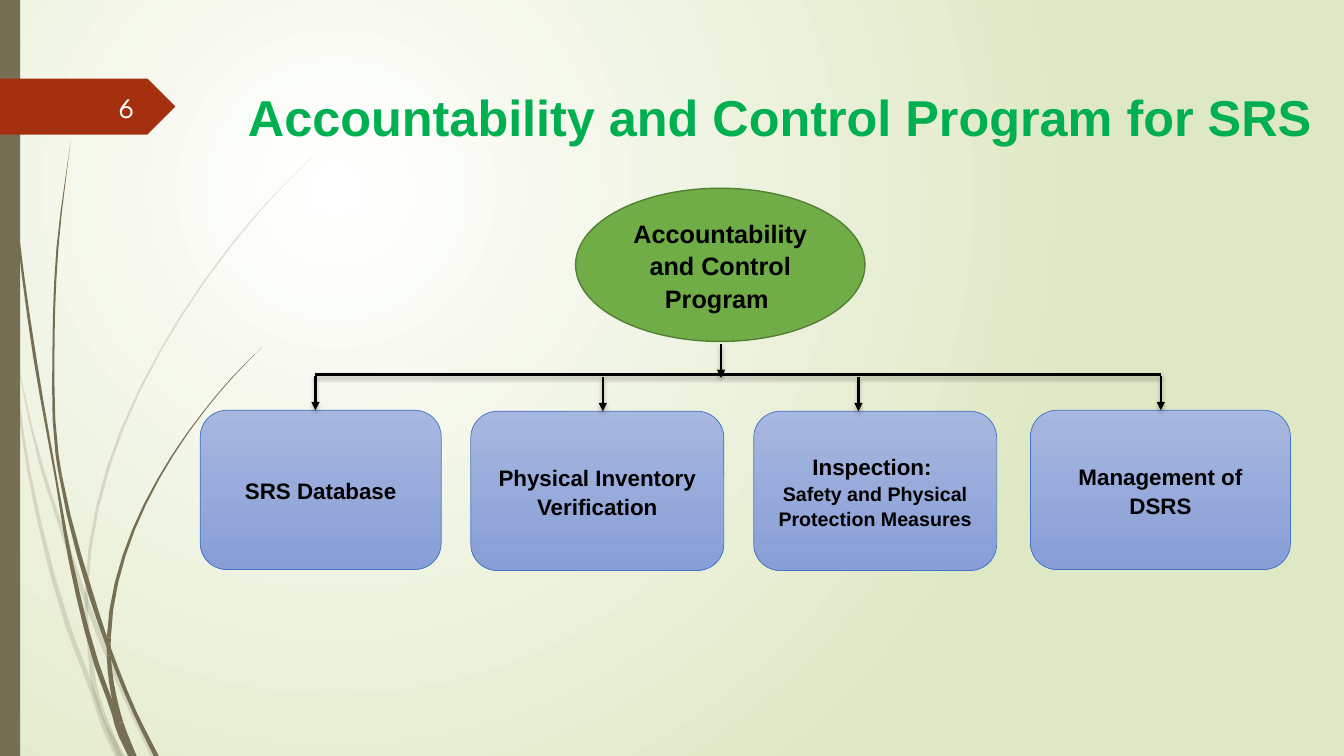
from lxml.etree import SubElement
from pptx import Presentation
from pptx.dml.color import RGBColor
from pptx.enum.shapes import MSO_CONNECTOR, MSO_SHAPE
from pptx.enum.text import MSO_ANCHOR, PP_ALIGN
from pptx.oxml.ns import qn
from pptx.util import Inches, Pt

WIDTH, HEIGHT = Inches(13.33), Inches(7.5)

BLACK = RGBColor(0x00, 0x00, 0x00)
WHITE = RGBColor(0xFF, 0xFF, 0xFF)
PALE = RGBColor(0xDF, 0xE8, 0xC4)
OLIVE = RGBColor(0x76, 0x6F, 0x54)
RUST = RGBColor(0xA5, 0x30, 0x10)
TITLE = RGBColor(0x00, 0xB0, 0x50)
GREEN = RGBColor(0x70, 0xAD, 0x47)
EDGE = RGBColor(0x53, 0x80, 0x35)
BLUE = RGBColor(0x44, 0x72, 0xC4)
LIGHT = RGBColor(0xA8, 0xB7, 0xDF)
DEEP = RGBColor(0x88, 0x9E, 0xD7)
NUMBER = RGBColor(0xFE, 0xFF, 0xFF)

# Strands: joints between their parts, then centre x, y and breadth in percent
FAINT = [
    ((1, 5), [(0, 38.7, .15), (.83, 46.7, .15), (2.18, 62.7, .23),
              (5.03, 82.7, .38), (7.05, 92.3, .38), (7.58, 95.2, .4),
              (8.93, 100, .75)]),
    ((3,), [(1.05, 46, 0), (3.08, 61.7, .23), (4.5, 69.5, .3),
            (6.45, 79.7, .38), (9.38, 92.4, .38), (11.4, 100, .38)]),
    ((5, 6, 8), [(23.4, 20.4, 0), (20.1, 26.4, .08), (17.1, 32.7, .15),
                 (11.93, 46.4, .15), (8.1, 61.6, .23), (6.45, 78, .23),
                 (6.45, 81.3, .23), (6.68, 86.1, .3), (7.05, 91.1, .4),
                 (8.93, 100, .38)]),
]
SOLID = [
    ((4, 8), [(.26, 0, .08), (.56, 14.7, .08), (1.35, 31.1, .15),
              (2.59, 47.3, .23), (4.2, 63.6, .15), (5.25, 74.1, .3),
              (7.16, 87.7, .38), (8.55, 94.7, .38), (8.78, 96.2, .4),
              (9.83, 100, .6)]),
    ((4, 6), [(5.25, 18.8, 0), (4.28, 32.7, .15), (3.98, 46.5, .15),
              (4.24, 60, .23), (4.5, 62.9, .23), (6.79, 78.8, .38),
              (8.1, 85.7, .3), (10.05, 94.3, .3), (11.63, 100, .38)]),
    ((5, 6, 8), [(19.5, 45.9, 0), (17.3, 49.9, .08), (15.3, 54.1, .08),
                 (11.8, 63.3, .15), (9.23, 73.5, .23), (8.1, 84.3, .3),
                 (8.1, 86.7, .3), (8.48, 92.1, .38), (9, 95.6, .38),
                 (9.98, 100, .38)]),
]

# Boxes: left, top, width, arrow x (percent) and lines of text with sizes
BOX_TALL, DROP, BUS = 21.07, 4.5, 49.55
BOXES = [
    (14.9, 54.27, 17.93, 23.47, [("SRS Database", 16)]),
    (35.03, 54.4, 18.83, 44.85, [("Physical Inventory Verification", 16)]),
    (56.08, 54.4, 18.08, 63.87, [("Inspection: ", 16),
                                 ("Safety and Physical Protection Measures", 14)]),
    (76.67, 54.27, 19.35, 86.37, [("Management of DSRS", 16)]),
]


def across(share):
    return round(WIDTH * share / 100)


def down(share):
    return round(HEIGHT * share / 100)


def place(x, y, wide, tall):
    return across(x), down(y), across(wide), down(tall)


def write(frame, lines, font="Arial", color=BLACK, bold=True, wrap=True,
          align=PP_ALIGN.CENTER, anchor=MSO_ANCHOR.MIDDLE, space=None, after=0):
    frame.word_wrap = wrap
    frame.vertical_anchor = anchor
    for i, (text, size) in enumerate(lines):
        para = frame.add_paragraph() if i else frame.paragraphs[0]
        para.alignment = align
        para.line_spacing = space
        para.space_after = Pt(after if i == len(lines) - 1 else 0)
        run = para.add_run()
        run.text = text
        run.font.name, run.font.size = font, Pt(size)
        run.font.bold, run.font.color.rgb = bold, color


def blend(fill, first, last):
    fill.gradient()
    for stop, color, spot in zip(fill.gradient_stops, (first, last), (0, 1)):
        stop.color.rgb, stop.position = color, spot


def paint(shape, color, edge=None, weight=1):
    shape.shadow.inherit = False
    if color is not None:
        shape.fill.solid()
        shape.fill.fore_color.rgb = color
    if edge is None:
        shape.line.fill.background()
    else:
        shape.line.color.rgb = edge
        shape.line.width = Pt(weight)


def backdrop(slide):
    blend(slide.background.fill, WHITE, PALE)
    grad = next(slide.element.iter(qn("a:gradFill")))
    grad.remove(grad.find(qn("a:lin")))
    ring = SubElement(grad, qn("a:path"), path="circle")
    SubElement(ring, qn("a:fillToRect"), l="50000", t="50000",
               r="100000", b="100000")


def curve(points, steps=3):
    """Smooth line through the points, with x as a function of y."""
    secant = [(b[0] - a[0]) / (b[1] - a[1]) for a, b in zip(points, points[1:])]
    slope = [secant[0]]
    for i in range(1, len(secant)):
        up = points[i][1] - points[i - 1][1]
        low = points[i + 1][1] - points[i][1]
        slope.append((secant[i - 1] * low + secant[i] * up) / (up + low))
    slope.append(secant[-1])
    for i, (a, b) in enumerate(zip(points, points[1:])):
        gap = b[1] - a[1]
        for t in (n / steps for n in range(steps)):
            ease = t * t * (3 - 2 * t)
            bend = t * (1 - t) * ((1 - t) * slope[i] - t * slope[i + 1])
            yield (a[0] + (b[0] - a[0]) * ease + gap * bend,
                   a[1] + gap * t, a[2] + (b[2] - a[2]) * t)
    yield points[-1]


def strand(slide, joints, points, alpha=None, steps=3):
    line = list(curve(points, steps))
    cuts = [0, *joints, len(points) - 1]
    for first, last in zip(cuts, cuts[1:]):
        part = line[first * steps:last * steps + 1]
        rim = [(across(x - w / 2), down(y)) for x, y, w in part]
        rim += [(across(x + w / 2), down(y)) for x, y, w in reversed(part)]
        pen = slide.shapes.build_freeform(*rim[0])
        pen.add_line_segments(rim[1:])
        shape = pen.convert_to_shape()
        paint(shape, OLIVE)
        if alpha:
            tint = next(shape.element.spPr.iter(qn("a:srgbClr")))
            SubElement(tint, qn("a:alpha"), val=str(alpha * 1000))


def node(slide, kind, spot, color, edge=None, weight=1):
    shape = slide.shapes.add_shape(kind, *place(*spot))
    paint(shape, color, edge, weight)
    return shape


def link(slide, x1, y1, x2, y2, arrow=True):
    line = slide.shapes.add_connector(MSO_CONNECTOR.STRAIGHT, across(x1),
                                      down(y1), across(x2), down(y2))
    line.line.color.rgb, line.line.width = BLACK, Pt(1.75)
    props = line.element.spPr
    if arrow:
        SubElement(props.find(qn("a:ln")), qn("a:tailEnd"), type="triangle")
    glow = SubElement(SubElement(props, qn("a:effectLst")), qn("a:outerShdw"),
                      blurRad="38100", dist="25400", dir="5400000")
    tint = SubElement(glow, qn("a:srgbClr"), val=str(BLACK))
    SubElement(tint, qn("a:alpha"), val="25000")


def main():
    deck = Presentation()
    deck.slide_width, deck.slide_height = WIDTH, HEIGHT
    slide = deck.slides.add_slide(deck.slide_layouts[5])
    # Background, strands, side bar and number tag
    backdrop(slide)
    for group, alpha in ((FAINT, 20), (SOLID, None)):
        for joints, points in group:
            strand(slide, joints, points, alpha)
    node(slide, MSO_SHAPE.RECTANGLE, (0, 0, 1.5, 100), OLIVE)
    node(slide, MSO_SHAPE.PENTAGON, (0, 10.4, 13.05, 7.4), RUST)
    page = slide.shapes.add_textbox(*place(4.35, 11.47, 6.38, 5.33))
    write(page.text_frame, [("6", 20)], font="League Spartan", color=NUMBER,
          bold=False, align=PP_ALIGN.RIGHT)
    # Title
    title = slide.shapes.title
    title.left, title.top, title.width, title.height = place(17.7, 2.93, 81.25, 18.67)
    title.text_frame.margin_bottom = down(2.2)
    write(title.text_frame, [("Accountability and Control Program for SRS", 36)],
          color=TITLE, wrap=False, align=PP_ALIGN.LEFT, anchor=MSO_ANCHOR.BOTTOM)
    # Program and its four parts
    root = node(slide, MSO_SHAPE.OVAL, (42.83, 24.9, 21.53, 20.27), GREEN, EDGE)
    write(root.text_frame, [("Accountability and Control Program ", 18)], space=1.07)
    for left, top, wide, _, lines in BOXES:
        box = node(slide, MSO_SHAPE.ROUNDED_RECTANGLE,
                   (left, top, wide, BOX_TALL), None, BLUE, .5)
        blend(box.fill, LIGHT, DEEP)
        box.fill.gradient_angle = 270
        write(box.text_frame, lines, space=1.07, after=8)
    # Connecting lines
    link(slide, BOXES[0][3], BUS, BOXES[-1][3], BUS, arrow=False)
    link(slide, 53.65, 45.5, 53.65, 50)
    for _, top, _, x, _ in BOXES:
        link(slide, x, top - DROP, x, top)
    deck.save("out.pptx")


if __name__ == "__main__":
    main()
